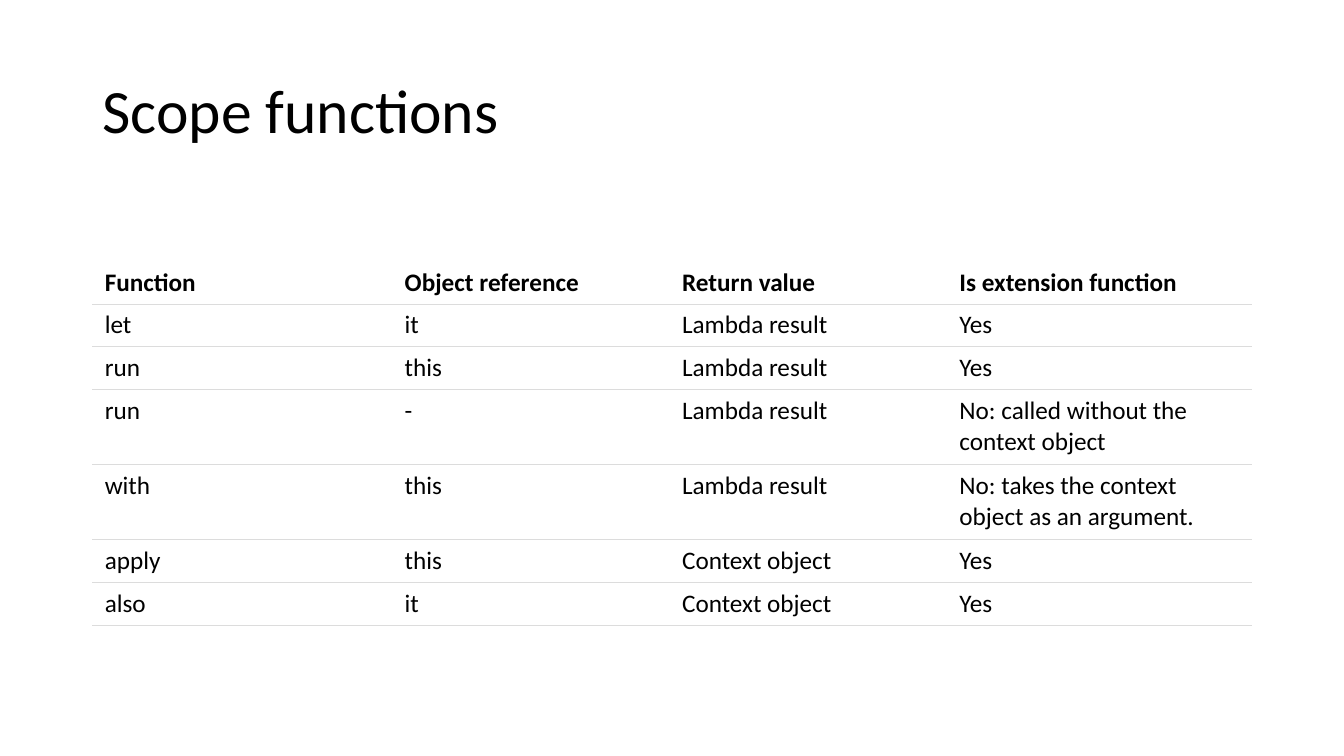
import pptx
import pptx.dml.color
import pptx.enum.text
import pptx.oxml
import pptx.oxml.ns
import pptx.util
from pptx.util import Cm, Pt

HEADINGS = ("Function", "Object reference", "Return value", "Is extension function")
SCOPE_FUNCTIONS = (
    ("let", "it", "Lambda result", "Yes"),
    ("run", "this", "Lambda result", "Yes"),
    ("run", "-", "Lambda result", "No: called without the context object"),
    ("with", "this", "Lambda result", "No: takes the context object as an argument."),
    ("apply", "this", "Context object", "Yes"),
    ("also", "it", "Context object", "Yes"),
)
COLUMN_WIDTHS = (7.62, 6.99, 6.99, 7.62)
ROW_HEIGHTS = (1.08, 1.08, 1.08, 1.89, 1.89, 1.08, 1.08)


def color(hex_value):
    return pptx.dml.color.RGBColor.from_string(hex_value)


def apply_format(target, values):
    for name, value in values.items():
        setattr(target, name, value)


class SlideBuilder:
    font_name = "Calibri"
    ink = "000000"
    rule = "DCDCDC"

    def __init__(self, slide):
        self.slide = slide

    def add_text(self, frame, text, size, bold=False):
        paragraph = frame.paragraphs[0]
        paragraph.alignment = pptx.enum.text.PP_ALIGN.LEFT
        run = paragraph.add_run()
        run.text = text
        apply_format(run.font, {"name": self.font_name, "size": Pt(size), "bold": bold})
        run.font.color.rgb = color(self.ink)
        return paragraph

    def title(self, text, left, top, width, height):
        heading = self.slide.shapes.title
        apply_format(heading, {"left": Cm(left), "top": Cm(top),
                               "width": Cm(width), "height": Cm(height)})
        apply_format(heading.text_frame, {
            "word_wrap": True,
            "auto_size": pptx.enum.text.MSO_AUTO_SIZE.NONE,
            "vertical_anchor": pptx.enum.text.MSO_ANCHOR.MIDDLE,
        })
        self.add_text(heading.text_frame, text, 44).line_spacing = 0.9

    def border(self, cell, edge, visible):
        line = pptx.oxml.parse_xml(
            f'<a:{edge} {pptx.oxml.ns.nsdecls("a")} w="{Pt(0.75)}">'
            + (f'<a:solidFill><a:srgbClr val="{self.rule}"/></a:solidFill>'
               if visible else "<a:noFill/>")
            + f"</a:{edge}>")
        cell._tc.get_or_add_tcPr().append(line)

    def table(self, rows, left, top, widths, heights):
        table = self.slide.shapes.add_table(
            len(rows), len(widths), Cm(left), Cm(top),
            Cm(sum(widths)), Cm(sum(heights))).table
        table.horz_banding = False
        for column, width in zip(table.columns, widths):
            column.width = Cm(width)
        last_column = len(widths) - 1
        for row_index, (values, height) in enumerate(zip(rows, heights)):
            table.rows[row_index].height = Cm(height)
            for column_index, value in enumerate(values):
                cell = table.cell(row_index, column_index)
                apply_format(cell, {
                    "margin_left": Cm(0.25 if column_index else 0.31),
                    "margin_right": Cm(0.31 if column_index == last_column else 0.25),
                    "margin_top": Cm(0.15),
                    "margin_bottom": Cm(0.15),
                    "vertical_anchor": pptx.enum.text.MSO_ANCHOR.TOP,
                })
                self.add_text(cell.text_frame, value, 18, bold=row_index == 0)
                for edge, visible in (("lnL", False), ("lnR", False),
                                      ("lnT", row_index > 0), ("lnB", True)):
                    self.border(cell, edge, visible)
                cell.fill.background()


def main():
    deck = pptx.Presentation()
    deck.slide_width, deck.slide_height = Cm(33.87), Cm(19.05)
    builder = SlideBuilder(deck.slides.add_slide(deck.slide_layouts[5]))
    builder.title("Scope functions", 2.33, 1.01, 29.21, 3.68)
    builder.table((HEADINGS, *SCOPE_FUNCTIONS), 2.33, 6.58, COLUMN_WIDTHS, ROW_HEIGHTS)
    deck.save("out.pptx")


if __name__ == "__main__":
    main()
